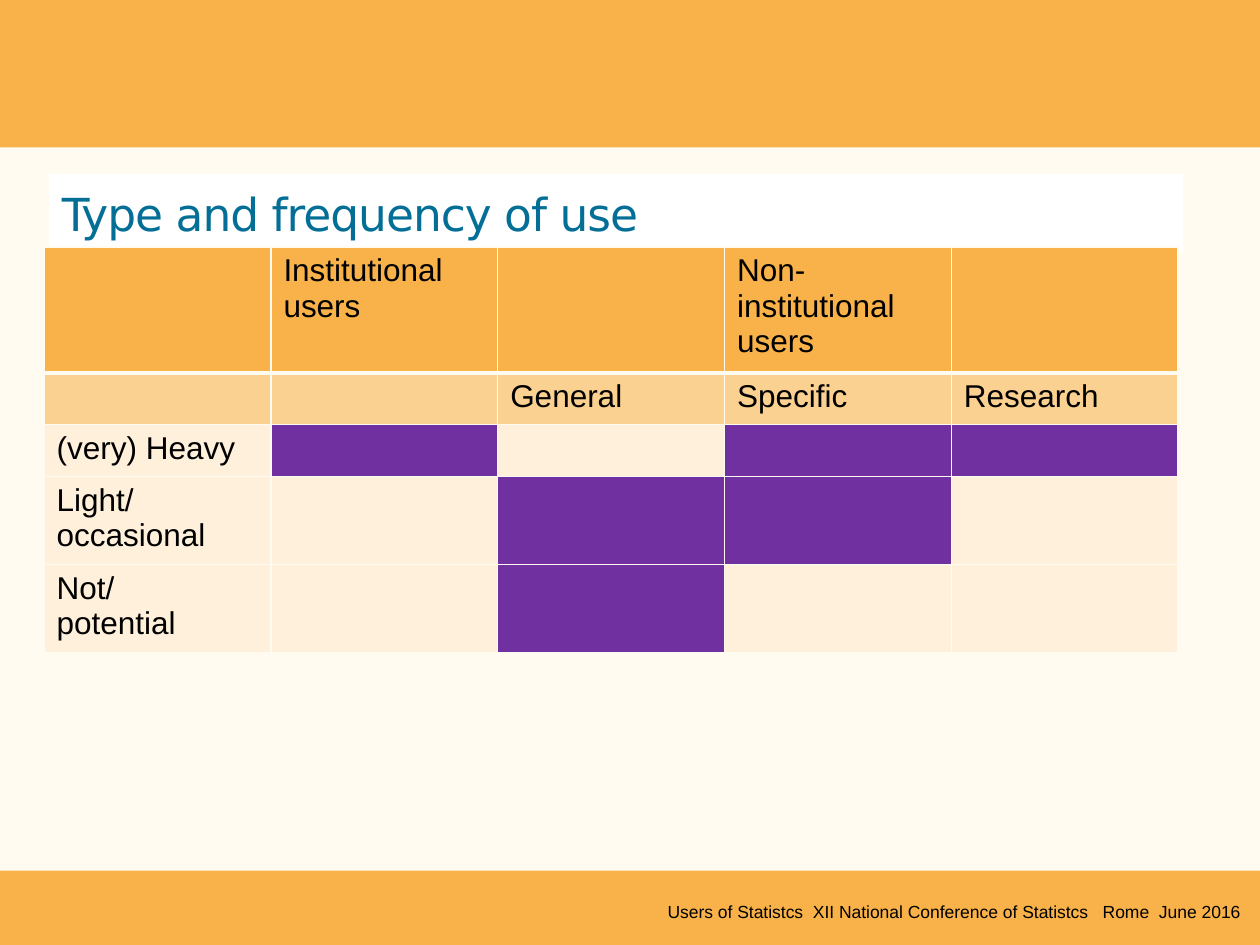
from lxml import etree
from pptx import Presentation
from pptx.dml.color import RGBColor
from pptx.enum.shapes import MSO_SHAPE
from pptx.enum.text import MSO_ANCHOR, PP_ALIGN
from pptx.oxml.ns import qn
from pptx.util import Inches, Pt

ORANGE, LIGHT_ORANGE, CREAM = "F9B249", "FBD192", "FEF0DB"
PURPLE, IVORY, BLUE = "7030A0", "FFFBF0", "046F96"

ROWS = [
    ["", "Institutional users", "", "Non-institutional users", ""],
    ["", "", "General", "Specific", "Research"],
    ["(very) Heavy", "", "", "", ""],
    ["Light/\noccasional", "", "", "", ""],
    ["Not/\npotential", "", "", "", ""],
]
ROW_FILLS = [ORANGE, LIGHT_ORANGE, CREAM, CREAM, CREAM]
USED_CELLS = {(2, 1), (2, 3), (2, 4), (3, 2), (3, 3), (4, 2)}


def rgb(color):
    return RGBColor.from_string(color)


def paint(fill, color):
    fill.solid()
    fill.fore_color.rgb = rgb(color)


def set_font(paragraph, name, size, color="000000"):
    font = paragraph.font
    font.name, font.size, font.bold = name, Pt(size), False
    font.color.rgb = rgb(color)


def add_band(slide, top, height):
    band = slide.shapes.add_shape(
        MSO_SHAPE.RECTANGLE, 0, Inches(top), Inches(10), Inches(height))
    band.shadow.inherit = False
    paint(band.fill, ORANGE)
    band.line.fill.background()


def add_footer(slide, text):
    box = slide.shapes.add_textbox(
        Inches(5.2), Inches(7.1), Inches(4.8), Inches(0.27))
    box.text_frame.word_wrap = True
    paragraph = box.text_frame.paragraphs[0]
    paragraph.text = text
    set_font(paragraph, "Arial", 10)


def format_title(slide, text):
    title = slide.shapes.title
    title.left, title.top = Inches(0.39), Inches(1.38)
    title.width, title.height = Inches(9), Inches(0.62)
    paint(title.fill, "FFFFFF")
    title.text_frame.vertical_anchor = MSO_ANCHOR.MIDDLE
    paragraph = title.text_frame.paragraphs[0]
    paragraph.text = text
    paragraph.alignment = PP_ALIGN.LEFT
    set_font(paragraph, "DejaVu Sans", 26, BLUE)
    # Slightly tightened letter spacing
    paragraph.runs[0].font._element.set("spc", "-60")


def set_borders(cell, top, bottom):
    properties = cell._tc.get_or_add_tcPr()
    for side, width in (("L", 1), ("R", 1), ("T", top), ("B", bottom)):
        line = etree.SubElement(properties, qn(f"a:ln{side}"), w=str(Pt(width)))
        solid = etree.SubElement(line, qn("a:solidFill"))
        etree.SubElement(solid, qn("a:srgbClr"), val=IVORY)


def add_use_table(slide):
    frame = slide.shapes.add_table(
        len(ROWS), len(ROWS[0]),
        Inches(0.35), Inches(1.96), Inches(9), Inches(3.51))
    table = frame.table
    for row_index, texts in enumerate(ROWS):
        table.rows[row_index].height = Inches(0.41)
        for column_index, text in enumerate(texts):
            cell = table.cell(row_index, column_index)
            cell.text = text
            for paragraph in cell.text_frame.paragraphs:
                set_font(paragraph, "Arial", 18)
            # A thick rule parts the header from the body
            set_borders(cell, 3 if row_index == 1 else 1,
                        3 if row_index == 0 else 1)
            used = (row_index, column_index) in USED_CELLS
            paint(cell.fill, PURPLE if used else ROW_FILLS[row_index])
    frame.height = Inches(3.51)


def main():
    presentation = Presentation()
    presentation.slide_width, presentation.slide_height = Inches(10), Inches(7.5)
    slide = presentation.slides.add_slide(presentation.slide_layouts[5])
    paint(slide.background.fill, IVORY)

    # Bands and footer
    add_band(slide, 6.91, 0.59)
    add_band(slide, 0, 1.17)
    add_footer(slide, "Users of Statistcs  XII National Conference of Statistcs"
                      "   Rome  June 2016")

    # Title and table
    format_title(slide, "Type and frequency of use")
    add_use_table(slide)
    presentation.save("out.pptx")


if __name__ == "__main__":
    main()
